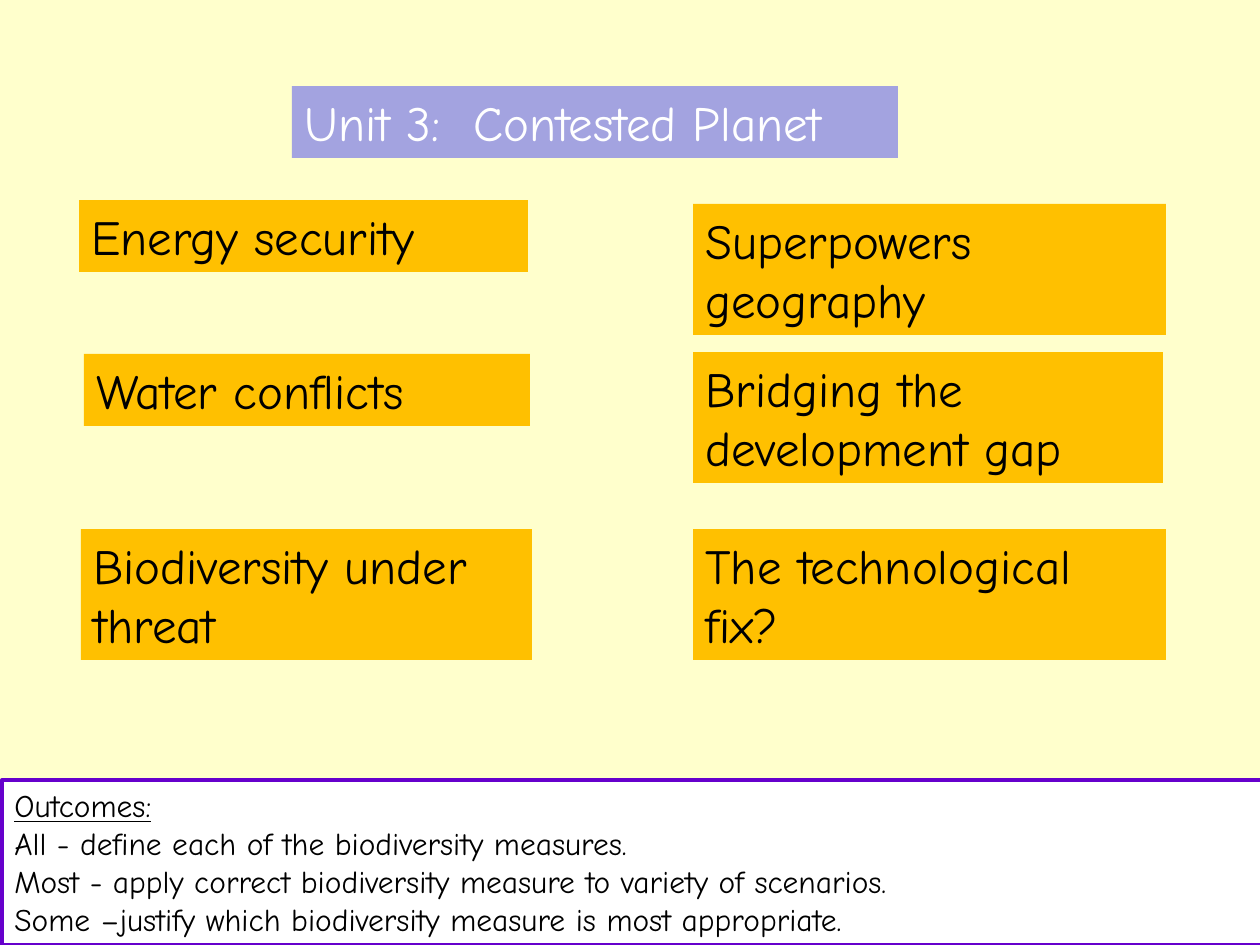
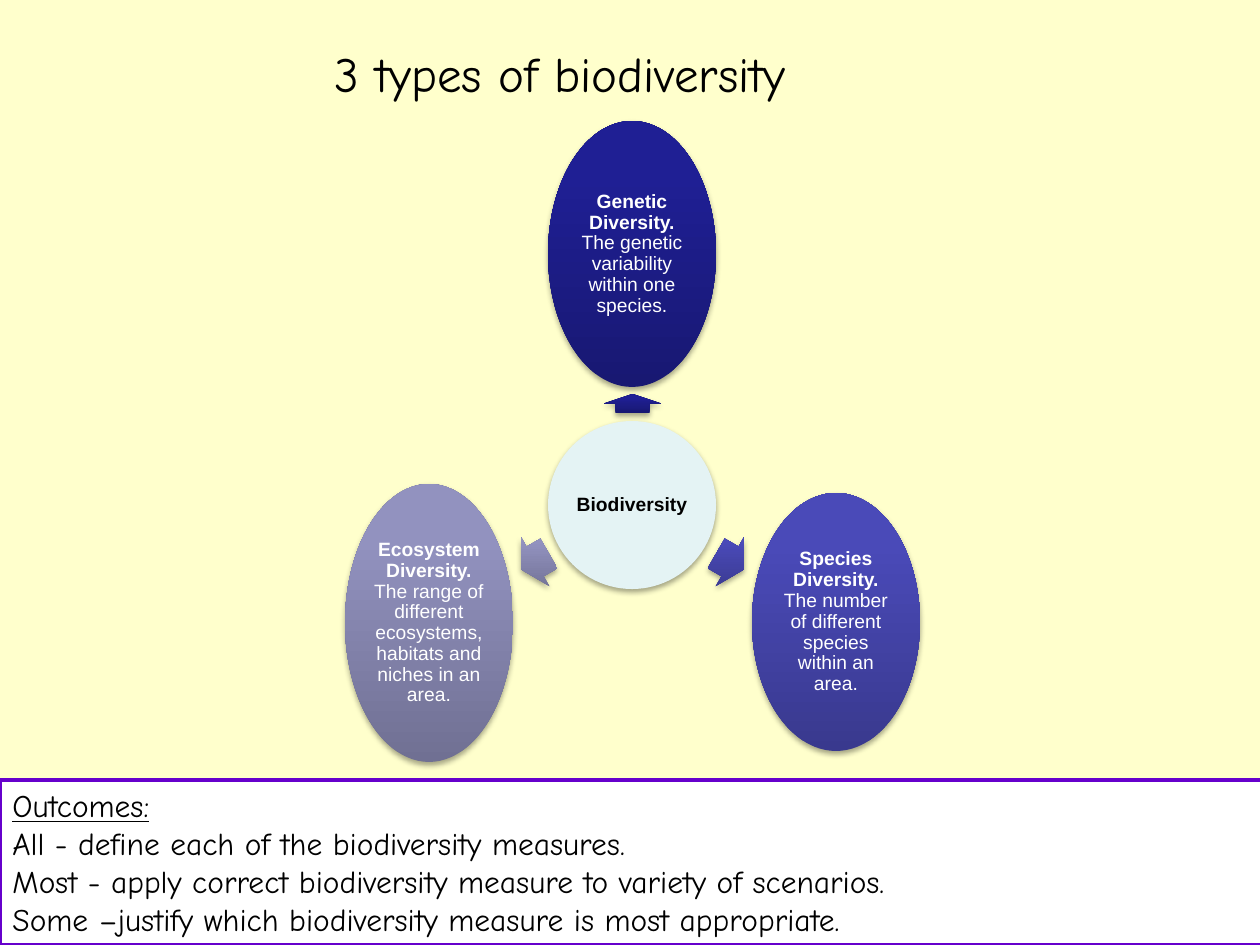
"""Build two biodiversity lesson slides with a shared title style and outcomes band."""
import pptx
import pptx.dml.color
import pptx.enum.shapes
import pptx.enum.text
import pptx.oxml
import pptx.oxml.ns
import pptx.util

RGBColor = pptx.dml.color.RGBColor
SHAPE = pptx.enum.shapes.MSO_SHAPE
ANCHOR = pptx.enum.text.MSO_ANCHOR
ALIGN = pptx.enum.text.PP_ALIGN

CREAM = RGBColor(0xFF, 0xFF, 0xCC)
AMBER = RGBColor(0xFF, 0xC0, 0x00)
LAVENDER = RGBColor(0xA3, 0xA3, 0xE0)
PURPLE = RGBColor(0x66, 0x00, 0xCC)
PALE_BLUE = RGBColor(0xE4, 0xF3, 0xF4)
BLACK = RGBColor(0x00, 0x00, 0x00)
WHITE = RGBColor(0xFF, 0xFF, 0xFF)
NAVY = (RGBColor(0x18, 0x18, 0x72), RGBColor(0x1F, 0x1F, 0x94))
INDIGO = (RGBColor(0x39, 0x39, 0x8E), RGBColor(0x4A, 0x4A, 0xB8))
GREY_BLUE = (RGBColor(0x70, 0x70, 0x93), RGBColor(0x92, 0x92, 0xBF))

PX_PER_INCH = 126
LESSON_FONT = "Comic Neue"
DIAGRAM_FONT = "Arial"
OUTCOMES = [
    "Outcomes:",
    "All - define each of the biodiversity measures.",
    "Most - apply correct biodiversity measure to variety of scenarios.",
    "Some –justify which biodiversity measure is most appropriate.",
]
UNIT_TOPICS = [
    ("Energy security", 79, 200, 449, 72),
    ("Water conflicts", 84, 354, 446, 72),
    ("Biodiversity under threat", 81, 529, 451, 131),
    ("Superpowers geography", 693, 204, 473, 131),
    ("Bridging the development gap", 693, 352, 470, 131),
    ("The technological fix?", 693, 529, 473, 131),
]
DIVERSITY_TYPES = [
    ("Genetic Diversity. ", "The genetic variability within one species.",
     NAVY, (548, 121, 168, 266), (623, 375, 19, 57), 270),
    ("Species Diversity. ", "The number of different species within an area.",
     INDIGO, (752, 493, 168, 258), (714, 533, 32, 57), 30),
    ("Ecosystem Diversity. ",
     "The range of different ecosystems, habitats and niches in an area.",
     GREY_BLUE, (345, 484, 168, 278), (519, 533, 32, 57), 150),
]
SHADOW_XML = (
    f'<a:outerShdw {pptx.oxml.ns.nsdecls("a")} blurRad="40000" dist="23000" '
    'dir="5400000" rotWithShape="0"><a:srgbClr val="000000">'
    '<a:alpha val="35000"/></a:srgbClr></a:outerShdw>'
)


def px(length):
    """Turn a length in px into EMU."""
    return pptx.util.Emu(round(length * 914400 / PX_PER_INCH))


class Deck:
    """Hold the shared style and the current slide."""

    def __init__(self):
        """Start a cream presentation."""
        self.presentation = pptx.Presentation()
        self.presentation.slide_width = px(1260)
        self.presentation.slide_height = px(945)
        background = self.presentation.slide_master.background.fill
        background.solid()
        background.fore_color.rgb = CREAM
        self.slide = None

    def start_slide(self, title, left, top, width, color=BLACK, fill=None):
        """Add a slide and style its title."""
        layout = self.presentation.slide_layouts.get_by_name("Title Only")
        self.slide = self.presentation.slides.add_slide(layout)
        shape = self.slide.shapes.title
        shape.left, shape.top = px(left), px(top)
        shape.width, shape.height = px(width), px(72)
        if fill is not None:
            shape.fill.solid()
            shape.fill.fore_color.rgb = fill
        self.lesson_text(shape, [title], 28, color)

    def lesson_text(self, shape, lines, size, color=BLACK):
        """Set left-aligned lesson text from the top of a shape."""
        frame = shape.text_frame
        frame.word_wrap = True
        frame.auto_size = pptx.enum.text.MSO_AUTO_SIZE.NONE
        frame.vertical_anchor = ANCHOR.TOP
        frame.text = "\n".join(lines)
        for paragraph in frame.paragraphs:
            paragraph.alignment = ALIGN.LEFT
            self.style(paragraph.font, LESSON_FONT, size, color)

    def style(self, font, name, size, color):
        """Set the face, size and colour of a font."""
        font.name = name
        font.size = pptx.util.Pt(size)
        font.color.rgb = color

    def shape(self, kind, box, fill):
        """Add a borderless shape with a plain fill or a (bottom, top) gradient."""
        shape = self.slide.shapes.add_shape(kind, *map(px, box))
        shape.shadow.inherit = False
        shape.line.fill.background()
        if isinstance(fill, RGBColor):
            shape.fill.solid()
            shape.fill.fore_color.rgb = fill
            return shape
        shape.fill.gradient()
        shape.fill.gradient_angle = 90
        for stop, position, color in zip(shape.fill.gradient_stops, (0, 0.8), fill):
            stop.position = position
            stop.color.rgb = color
        gradient = shape.element.spPr.find(pptx.oxml.ns.qn("a:gradFill"))
        gradient.set("rotWithShape", "0")
        return shape

    def raised(self, kind, box, fill):
        """Add a shape with a soft shadow below it."""
        shape = self.shape(kind, box, fill)
        effects = shape.element.spPr.find(pptx.oxml.ns.qn("a:effectLst"))
        effects.append(pptx.oxml.parse_xml(SHADOW_XML))
        return shape

    def topic(self, text, *box):
        """Add an amber topic box."""
        self.lesson_text(self.shape(SHAPE.RECTANGLE, box, AMBER), [text], 28)

    def outcomes(self, left, width):
        """Add the outcomes band along the bottom."""
        band = self.shape(SHAPE.RECTANGLE, (left, 780, width, 165), WHITE)
        band.line.color.rgb = PURPLE
        band.line.width = pptx.util.Pt(2.25)
        self.lesson_text(band, OUTCOMES, 18)
        band.text_frame.paragraphs[0].font.underline = True

    def bubble(self, heading, detail, box, fill, color):
        """Add an ellipse with a bold heading and a plain detail."""
        frame = self.raised(SHAPE.OVAL, box, fill).text_frame
        frame.word_wrap = True
        frame.vertical_anchor = ANCHOR.MIDDLE
        frame.margin_left = frame.margin_right = px(2)
        frame.margin_top = frame.margin_bottom = px(2)
        paragraph = frame.paragraphs[0]
        paragraph.alignment = ALIGN.CENTER
        paragraph.line_spacing = 0.9
        for text, bold in ((heading, True), (detail, False)):
            if text:
                run = paragraph.add_run()
                run.text = text
                run.font.bold = bold
                self.style(run.font, DIAGRAM_FONT, 11, color)

    def arrow(self, box, rotation, fill):
        """Add a block arrow pointing away from the hub."""
        arrow = self.raised(SHAPE.RIGHT_ARROW, box, fill)
        arrow.rotation = rotation
        arrow.adjustments[0] = 0.6
        arrow.adjustments[1] = 0.5


def main():
    """Build and save both slides."""
    deck = Deck()
    deck.start_slide("Unit 3:  Contested Planet", 292, 86, 606, WHITE, LAVENDER)
    for topic in UNIT_TOPICS:
        deck.topic(*topic)
    deck.outcomes(2, 1260)

    deck.start_slide("3 types of biodiversity", 322, 37, 553)
    deck.outcomes(0, 1265)
    deck.bubble("Biodiversity", "", (548, 421, 168, 168), PALE_BLUE, BLACK)
    for heading, detail, fill, bubble_box, arrow_box, rotation in DIVERSITY_TYPES:
        deck.arrow(arrow_box, rotation, fill)
        deck.bubble(heading, detail, bubble_box, fill, WHITE)
    deck.presentation.save("out.pptx")


if __name__ == "__main__":
    main()
